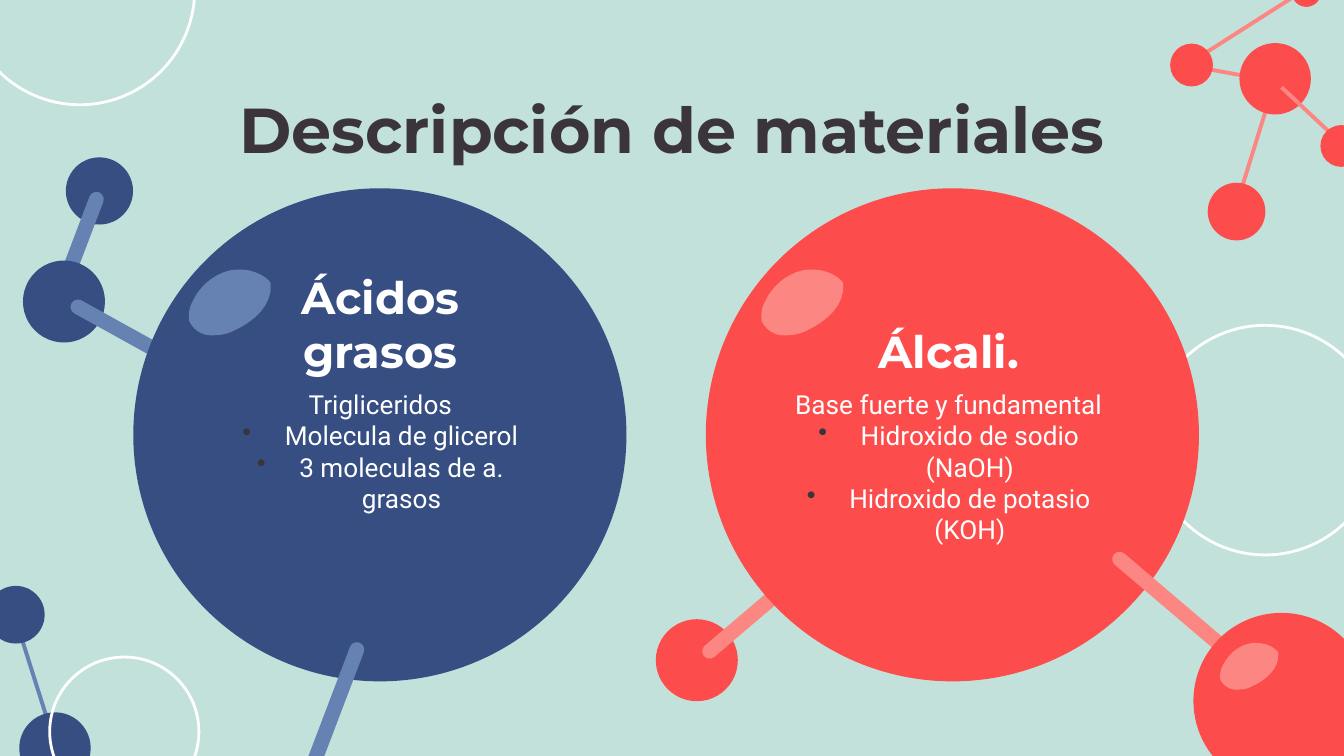
"""Build the slide on the two materials, fatty acids and alkali, with molecule decorations."""
from lxml import etree
from pptx import Presentation
from pptx.dml.color import RGBColor
from pptx.enum import shapes, text
from pptx.oxml import ns
from pptx.util import Cm, Pt

MINT = RGBColor(0xC2, 0xE1, 0xDA)
NAVY = RGBColor(0x36, 0x4E, 0x82)
STEEL = RGBColor(0x65, 0x82, 0xB2)
RED = RGBColor(0xFC, 0x4C, 0x4C)
PINK = RGBColor(0xFC, 0x87, 0x82)
INK = RGBColor(0x3B, 0x34, 0x3B)
WHITE = RGBColor(0xFF, 0xFF, 0xFF)

TITLE = "Descripción de materiales"
MATERIALS = [
    (3.99, "Ácidos grasos", "Trigliceridos",
     ["Molecula de glicerol", "3 moleculas de a. grasos"]),
    (14.73, "Álcali.", "Base fuerte y fundamental",
     ["Hidroxido de sodio (NaOH)", "Hidroxido de potasio (KOH)"]),
]

DECORATION = [
    ("bond", STEEL, 0.3, 11.72, 0.98, 13.87),
    ("atom", NAVY, 0.3, 11.62, 1.09),
    ("atom", NAVY, 1.04, 14.14, 1.35),
    ("bond", PINK, 22.58, 1.26, 23.93, 1.51),
    ("bond", PINK, 24.02, 1.77, 23.36, 3.9),
    ("atom", RED, 23.37, 4, 1.09),
    ("atom", RED, 24.1, 1.49, 1.35),
    ("bond", PINK, 24.22, 1.65, 25.33, 2.69),
    ("atom", RED, 25.35, 2.76, 0.79),
    ("bond", PINK, 24.65, -0.19, 22.47, 1.2),
    ("atom", RED, 24.69, -0.15, 0.56),
    ("atom", RED, 22.52, 1.23, 0.81),
    ("ring", WHITE, 1.51, -0.19, 4.34),
    ("ring", WHITE, 2.35, 13.83, 2.82),
    ("ring", WHITE, 23.91, 8.32, 4.34),
    ("atom", NAVY, 1.88, 3.61, 1.27),
    ("rod", STEEL, 1.52, 4.56, 1.98, 290.8),
    ("atom", NAVY, 1.21, 5.7, 1.55),
    ("rod", STEEL, 2.57, 6.41, 2.79, 29),
    ("atom", NAVY, 7.18, 8.22, 9.32),
    ("shine", STEEL, 3.61, 5.05, 1),
    ("rod", STEEL, 6.3, 13.45, 2.79, 290.8),
    ("atom", RED, 13.17, 12.48, 1.55),
    ("rod", PINK, 14.49, 11.39, 3.12, 139.6),
    ("atom", RED, 18, 8.22, 9.32),
    ("shine", PINK, 14.43, 5.05, 1),
    ("rod", PINK, 22.24, 11.49, 3.12, 40.4),
    ("atom", RED, 24.22, 13.25, 3.33),
    ("shine", PINK, 23.09, 12.12, 0.71),
]

SHINE_START = (1.02, 0.03)
SHINE_CURVES = [
    ((0.89, 0.03), (0.76, 0.03), (0.64, 0.08)),
    ((0.36, 0.18), (0.13, 0.43), (0.03, 0.71)),
    ((-0.03, 0.84), (-0.03, 0.97), (0, 1.09)),
    ((0.08, 1.22), (0.2, 1.3), (0.36, 1.32)),
    ((0.56, 1.32), (0.74, 1.27), (0.86, 1.19)),
    ((1.22, 0.99), (1.55, 0.64), (1.47, 0.23)),
    ((1.35, 0.1), (1.17, 0.05), SHINE_START),
]
ROD_THICKNESS = 0.28
CURVE_STEPS = 8


def paint(shape, color):
    shape.shadow.inherit = False
    shape.fill.solid()
    shape.fill.fore_color.rgb = color
    shape.line.fill.background()


def add_centred(page, kind, x, y, width, height):
    return page.shapes.add_shape(
        kind, Cm(x - width / 2), Cm(y - height / 2), Cm(width), Cm(height))


def add_atom(page, color, x, y, size):
    paint(add_centred(page, shapes.MSO_SHAPE.OVAL, x, y, size, size), color)


def add_ring(page, color, x, y, size):
    ring = add_centred(page, shapes.MSO_SHAPE.OVAL, x, y, size, size)
    ring.shadow.inherit = False
    ring.fill.background()
    ring.line.color.rgb = color
    ring.line.width = Pt(1.5)


def add_rod(page, color, x, y, length, angle):
    rod = add_centred(
        page, shapes.MSO_SHAPE.ROUNDED_RECTANGLE, x, y, length, ROD_THICKNESS)
    rod.adjustments[0] = 0.5
    rod.rotation = angle
    paint(rod, color)


def add_bond(page, color, x1, y1, x2, y2):
    bond = page.shapes.add_connector(
        shapes.MSO_CONNECTOR.STRAIGHT, Cm(x1), Cm(y1), Cm(x2), Cm(y2))
    bond.line.color.rgb = color
    bond.line.width = Pt(2.1)
    etree.SubElement(bond._element.spPr, ns.qn("a:effectLst"))


def curve_point(start, first, second, end, t):
    weights = ((1 - t) ** 3, 3 * t * (1 - t) ** 2, 3 * t * t * (1 - t), t ** 3)
    return tuple(sum(weight * value for weight, value in zip(weights, values))
                 for values in zip(start, first, second, end))


def add_shine(page, color, left, top, scale):
    outline = [SHINE_START]
    for curve in SHINE_CURVES:
        start = outline[-1]
        outline += [curve_point(start, *curve, step / CURVE_STEPS)
                    for step in range(1, CURVE_STEPS + 1)]
    points = [(Cm(left + x * scale), Cm(top + y * scale)) for x, y in outline]
    builder = page.shapes.build_freeform(*points[0])
    builder.add_line_segments(points[1:], close=True)
    shine = builder.convert_to_shape()
    shine.rotation = 5
    paint(shine, color)


def add_text(page, place, lines, font, size, color, bold=False,
             anchor=text.MSO_ANCHOR.TOP):
    box = page.shapes.add_textbox(*map(Cm, place))
    frame = box.text_frame
    frame.word_wrap = True
    frame.vertical_anchor = anchor
    frame.margin_left = frame.margin_right = Cm(0.25)
    frame.margin_top = frame.margin_bottom = Cm(0.25)
    frame.text = "\n".join(lines)
    for para in frame.paragraphs:
        para.alignment = text.PP_ALIGN.CENTER
        for span in para.runs:
            span.font.name = font
            span.font.size = Pt(size)
            span.font.bold = bold
            span.font.color.rgb = color
    return frame.paragraphs


def add_bullet(para):
    properties = para._p.get_or_add_pPr()
    properties.set("marL", str(Cm(0.8)))
    properties.set("indent", str(Cm(-0.8)))
    tint = etree.SubElement(properties, ns.qn("a:buClr"))
    etree.SubElement(tint, ns.qn("a:srgbClr"), val=str(INK))
    etree.SubElement(properties, ns.qn("a:buChar"), char="•")


def main():
    deck = Presentation()
    deck.slide_width, deck.slide_height = Cm(25.4), Cm(14.29)
    page = deck.slides.add_slide(deck.slide_layouts[6])
    page.background.fill.solid()
    page.background.fill.fore_color.rgb = MINT

    draw = {"atom": add_atom, "ring": add_ring, "rod": add_rod,
            "bond": add_bond, "shine": add_shine}
    for kind, color, *geometry in DECORATION:
        draw[kind](page, color, *geometry)

    heading = add_text(page, (1.98, 1.24, 21.44, 1.6), [TITLE],
                       "Montserrat", 34, INK, bold=True)
    heading[0].line_spacing = 1.15
    for left, name, summary, items in MATERIALS:
        paras = add_text(page, (left, 7.09, 6.4, 3.5), [summary, *items],
                         "Roboto", 14, WHITE)
        for para in paras[1:]:
            add_bullet(para)
        add_text(page, (left, 5.84, 6.4, 1.55), [name], "Montserrat", 24, WHITE,
                 bold=True, anchor=text.MSO_ANCHOR.BOTTOM)
    deck.save("out.pptx")


if __name__ == "__main__":
    main()
